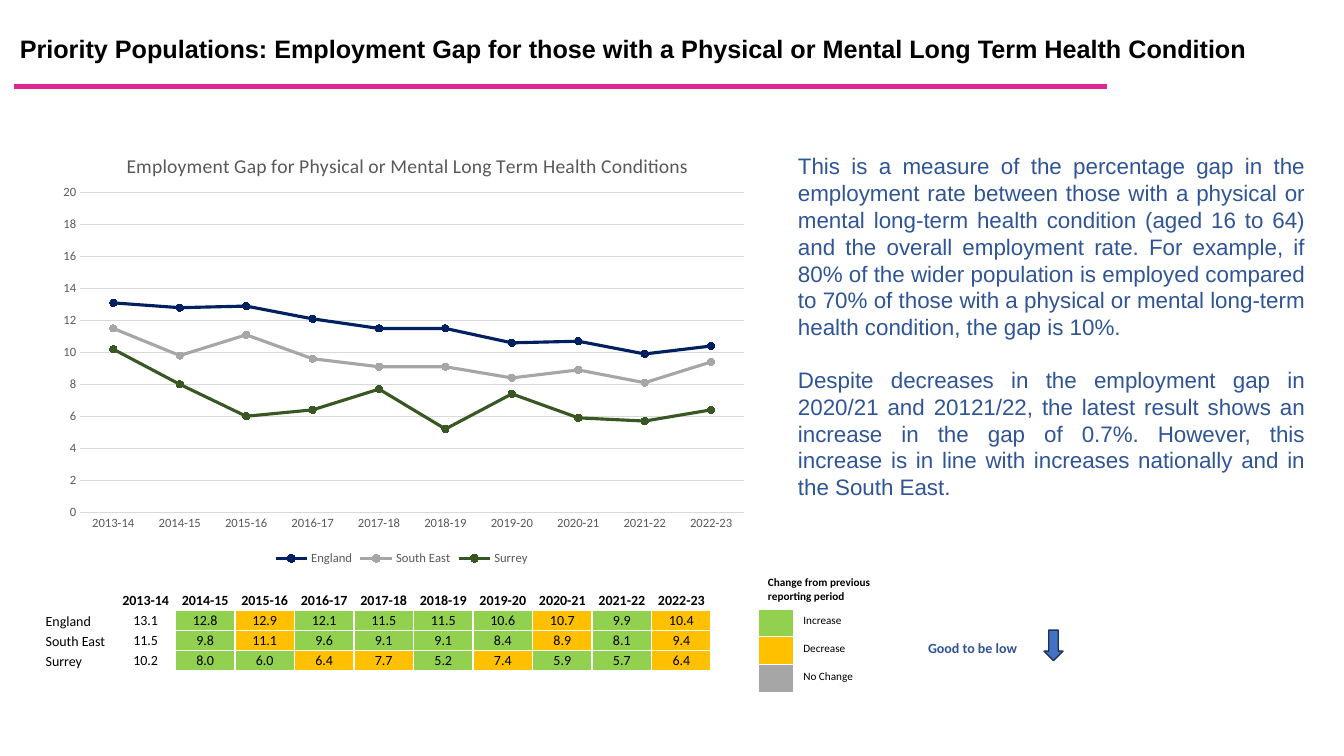
from dataclasses import dataclass
from itertools import pairwise
from typing import NamedTuple

from lxml.etree import SubElement
from pptx import Presentation
from pptx.chart.data import CategoryChartData
from pptx.dml.color import RGBColor
from pptx.enum.chart import XL_CHART_TYPE as Chart, XL_LEGEND_POSITION as Legend
from pptx.enum.chart import XL_MARKER_STYLE as Marker, XL_TICK_MARK as Tick
from pptx.enum.shapes import MSO_CONNECTOR as Connector, MSO_SHAPE as Shape
from pptx.enum.text import MSO_ANCHOR as Anchor, PP_ALIGN as Align
from pptx.oxml import parse_xml
from pptx.oxml.ns import nsdecls, qn
from pptx.util import Cm, Pt


@dataclass(frozen=True)
class Theme:
    heading_font: str = "Arial"
    data_font: str = "Calibri"
    black: str = "000000"
    white: str = "FFFFFF"
    blue: str = "2F5597"
    pink: str = "E22691"
    green: str = "92D050"
    amber: str = "FFC000"
    grey: str = "A6A6A6"
    axis: str = "595959"
    grid: str = "D9D9D9"
    arrow: str = "4472C4"
    arrow_edge: str = "1E3256"
    title: float = 18
    body: float = 16
    chart_title: float = 14
    table: float = 10
    label: float = 9
    key: float = 8


class Series(NamedTuple):
    name: str
    color: str
    values: list[float]


class Key(NamedTuple):
    label: str
    color: str


class Box(NamedTuple):
    x: float
    y: float
    w: float
    h: float

    def emu(self) -> list[Cm]:
        return [Cm(v) for v in self]


T = Theme()
YEARS = [f"{y}-{y - 1999}" for y in range(2013, 2023)]
SERIES = [
    Series("England", "002060", [13.1, 12.8, 12.9, 12.1, 11.5, 11.5, 10.6, 10.7, 9.9, 10.4]),
    Series("South East", T.grey, [11.5, 9.8, 11.1, 9.6, 9.1, 9.1, 8.4, 8.9, 8.1, 9.4]),
    Series("Surrey", "385723", [10.2, 8, 6, 6.4, 7.7, 5.2, 7.4, 5.9, 5.7, 6.4]),
]
KEYS = [Key("Increase", T.green), Key("Decrease", T.amber), Key("No Change", T.grey)]
TITLE = ("Priority Populations: Employment Gap for those with a Physical or "
         "Mental Long Term Health Condition")
CHART_TITLE = "Employment Gap for Physical or Mental Long Term Health Conditions"
BODY = [
    "This is a measure of the percentage gap in the employment rate between those with a "
    "physical or mental long-term health condition (aged 16 to 64) and the overall employment "
    "rate. For example, if 80% of the wider population is employed compared to 70% of those "
    "with a physical or mental long-term health condition, the gap is 10%.",
    "Despite decreases in the employment gap in 2020/21 and 20121/22, the latest result shows "
    "an increase in the gap of 0.7%. However, this increase is in line with increases "
    "nationally and in the South East.",
]


def rgb(color: str) -> RGBColor:
    return RGBColor.from_string(color)


def style_font(font, size: float, color: str, name: str, bold: bool = False) -> None:
    font.size, font.name, font.bold = Pt(size), name, bold
    font.color.rgb = rgb(color)


def style_line(line, color: str, width: float) -> None:
    line.color.rgb, line.width = rgb(color), Pt(width)


def add_run(p, text: str, size: float, color: str, name: str, bold: bool = False) -> None:
    r = p.add_run()
    r.text = text
    style_font(r.font, size, color, name, bold)


def add_text(shapes, box: Box, anchor=Anchor.TOP):
    tf = shapes.add_textbox(*box.emu()).text_frame
    tf.word_wrap, tf.vertical_anchor = True, anchor
    return tf


def add_table(s, box: Box, widths: list[float], heights: list[float]):
    table = s.shapes.add_table(len(heights), len(widths), *box.emu()).table
    table.first_row = table.horz_banding = False
    for col, w in zip(table.columns, widths):
        col.width = Cm(w)
    for row, h in zip(table.rows, heights):
        row.height = Cm(h)
    return table


def fill_cell(cell, text: str, size: float, color: str = "", bold: bool = False,
              bottom: float = 1) -> None:
    tc_pr = cell._tc.get_or_add_tcPr()
    for side, width in zip("LRTB", (1, 1, 1, bottom)):
        ln = SubElement(tc_pr, qn(f"a:ln{side}"), w=str(Pt(width)))
        SubElement(SubElement(ln, qn("a:solidFill")), qn("a:srgbClr"), val=T.white)
    if color:
        cell.fill.solid()
        cell.fill.fore_color.rgb = rgb(color)
    else:
        cell.fill.background()
    p = cell.text_frame.paragraphs[0]
    if text:
        add_run(p, text, size, T.black, T.data_font, bold)
    else:
        SubElement(p._p, qn("a:endParaRPr"), sz=str(int(size * 100)))


def manual_layout(target: str, **place: float):
    parts = "".join(f'<c:{k} val="{v}"/>' for k, v in place.items())
    return parse_xml(f'<c:layout {nsdecls("c")}><c:manualLayout>{target}'
                     '<c:xMode val="edge"/><c:yMode val="edge"/>'
                     f'{parts}</c:manualLayout></c:layout>')


def add_gap_chart(s) -> None:
    data = CategoryChartData(number_format="0.0")
    data.categories = YEARS
    for item in SERIES:
        data.add_series(item.name, item.values)
    box = Box(1.12, 3.18, 18, 11.18)
    chart = s.shapes.add_chart(Chart.LINE_MARKERS, *box.emu(), data).chart
    style_font(chart.font, T.table, T.black, T.data_font)

    title = chart.chart_title
    add_run(title.text_frame.paragraphs[0], CHART_TITLE, T.chart_title, T.axis, T.data_font)
    title.include_in_layout = False
    for old in title._element.findall(qn("c:layout")):
        title._element.remove(old)
    title._element.find(qn("c:tx")).addnext(manual_layout("", x=0.11, y=0.05))

    area = chart._chartSpace.chart.plotArea
    for old in area.findall(qn("c:layout")):
        area.remove(old)
    area.insert(0, manual_layout('<c:layoutTarget val="inner"/>', x=0.05, y=0.15, w=0.93, h=0.72))

    for axis in (chart.category_axis, chart.value_axis):
        axis.major_tick_mark = axis.minor_tick_mark = Tick.NONE
        style_font(axis.tick_labels.font, T.label, T.axis, T.data_font)
    style_line(chart.category_axis.format.line, T.grid, 0.75)
    values = chart.value_axis
    values.minimum_scale, values.maximum_scale, values.major_unit = 0, 20, 2
    values.tick_labels.number_format = "0"
    values.tick_labels.number_format_is_linked = False
    values.format.line.fill.background()
    style_line(values.major_gridlines.format.line, T.grid, 0.75)

    chart.has_legend = True
    chart.legend.position, chart.legend.include_in_layout = Legend.BOTTOM, False
    style_font(chart.legend.font, T.label, T.axis, T.data_font)
    chart.plots[0].vary_by_categories = False
    for line, item in zip(chart.plots[0].series, SERIES):
        line.smooth = False
        style_line(line.format.line, item.color, 2.25)
        line.marker.style, line.marker.size = Marker.CIRCLE, 5
        line.marker.format.fill.solid()
        line.marker.format.fill.fore_color.rgb = rgb(item.color)
        style_line(line.marker.format.line, item.color, 0.75)


def add_gap_table(s) -> None:
    table = add_table(s, Box(1.12, 14.86, 16.8, 2.06), [1.8] + [1.5] * len(YEARS), [0.51] * 4)
    rows = [[("", "")] + [(year, "") for year in YEARS]]
    for item in SERIES:
        changes = [T.amber if now > before else T.green for before, now in pairwise(item.values)]
        figures = [f"{v:.1f}" for v in item.values]
        rows.append([(item.name, ""), *zip(figures, [T.white] + changes)])
    for i, row in enumerate(rows):
        for j, (text, color) in enumerate(row):
            cell = table.cell(i, j)
            fill_cell(cell, text, T.table, color, bold=i == 0)
            cell.margin_left = cell.margin_right = cell.margin_top = Cm(0.03)
            cell.margin_bottom = 0
            cell.vertical_anchor = Anchor.MIDDLE if j else Anchor.BOTTOM
            cell.text_frame.paragraphs[0].alignment = Align.CENTER if j else Align.LEFT


def add_key_table(s) -> None:
    table = add_table(s, Box(19.1, 14.38, 4.04, 3.07), [0.89, 3.15], [0.94] + [0.71] * 3)
    table.cell(0, 0).merge(table.cell(0, 1))
    fill_cell(table.cell(0, 0), "Change from previous reporting period", T.key, bold=True, bottom=3)
    for i, key in enumerate(KEYS, 1):
        fill_cell(table.cell(i, 0), "", T.key, key.color)
        fill_cell(table.cell(i, 1), key.label, T.key)


def add_direction(s) -> None:
    group = s.shapes.add_group_shape()
    p = add_text(group.shapes, Box(23.14, 15.98, 5.92, 0.68)).paragraphs[0]
    add_run(p, "Good to be low", T.table, T.blue, T.data_font, True)
    arrow = group.shapes.add_shape(Shape.DOWN_ARROW, *Box(26.31, 15.88, 0.48, 0.77).emu())
    arrow.shadow.inherit = False
    arrow.fill.solid()
    arrow.fill.fore_color.rgb = rgb(T.arrow)
    style_line(arrow.line, T.arrow_edge, 1)


def main() -> None:
    prs = Presentation()
    prs.slide_width, prs.slide_height = Cm(33.87), Cm(19.05)
    s = prs.slides.add_slide(prs.slide_layouts[6])
    add_key_table(s)
    tf = add_text(s.shapes, Box(19.86, 3.71, 13.28, 9.14))
    for i, text in enumerate(BODY):
        p = tf.add_paragraph() if i else tf.paragraphs[0]
        p.alignment = Align.JUSTIFY
        if i:
            p.space_before = Pt(18.4)
        add_run(p, text, T.body, T.blue, T.heading_font)
    rule = s.shapes.add_connector(Connector.STRAIGHT, Cm(0.36), Cm(2.18), Cm(27.89), Cm(2.18))
    style_line(rule.line, T.pink, 3)
    SubElement(rule._element.spPr, qn("a:effectLst"))
    p = add_text(s.shapes, Box(0.25, 0.18, 33.25, 2.18), Anchor.MIDDLE).paragraphs[0]
    p.line_spacing = 0.9
    add_run(p, TITLE, T.title, T.black, T.heading_font, True)
    add_gap_table(s)
    add_direction(s)
    add_gap_chart(s)
    prs.save("out.pptx")


if __name__ == "__main__":
    main()
